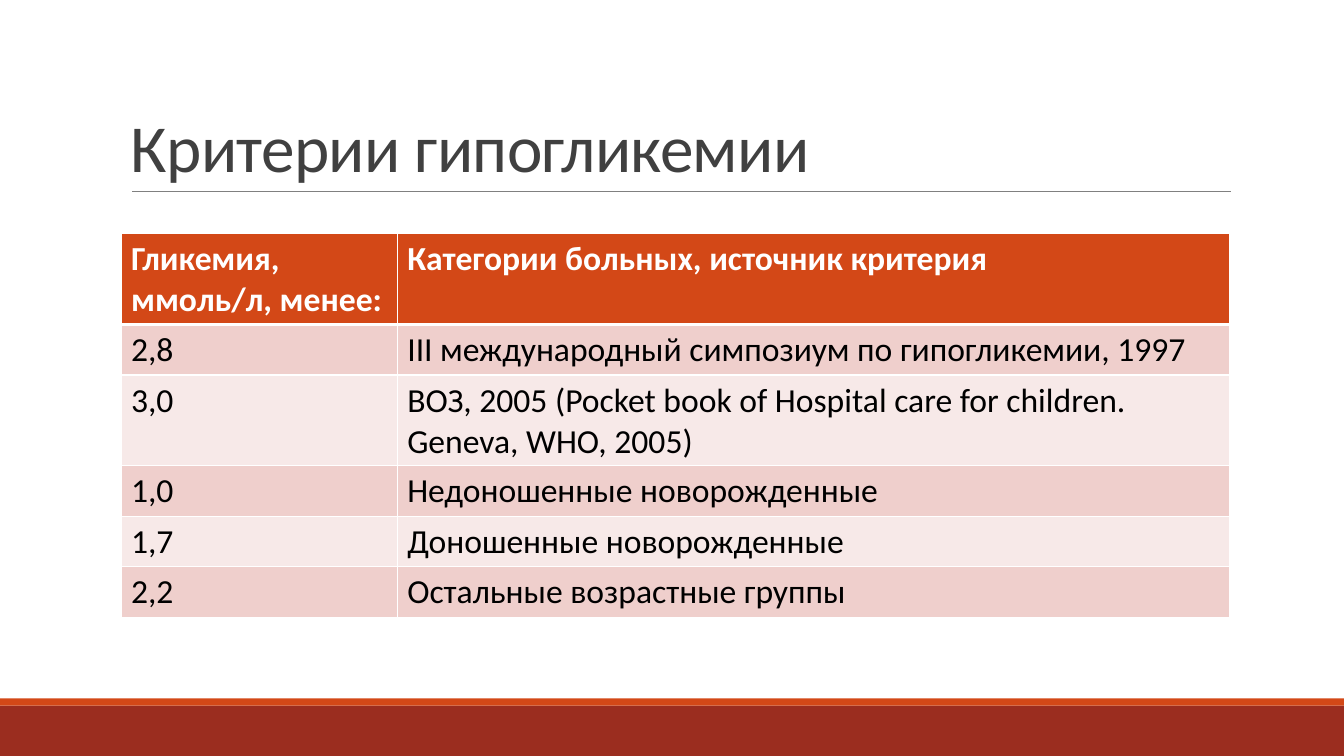
from lxml import etree
from pptx import Presentation
from pptx.dml.color import RGBColor
from pptx.enum import shapes, text
from pptx.oxml import ns
from pptx.util import Inches, Pt

TITLE = "Критерии гипогликемии"
ROWS = [
    ("Гликемия, ммоль/л, менее:", "Категории больных, источник критерия"),
    ("2,8", "III международный симпозиум по гипогликемии, 1997"),
    ("3,0", "ВОЗ, 2005 (Pocket book of Hospital care for children. Geneva, WHO, 2005)"),
    ("1,0", "Недоношенные новорожденные"),
    ("1,7", "Доношенные новорожденные"),
    ("2,2", "Остальные возрастные группы"),
]
COLUMN_WIDTHS = (2.74, 8.26)
ONE_LINE, TWO_LINES = 0.5, 0.9
ROW_HEIGHTS = (TWO_LINES, ONE_LINE, TWO_LINES, ONE_LINE, ONE_LINE, ONE_LINE)

WHITE = RGBColor(0xFF, 0xFF, 0xFF)
BLACK = RGBColor(0x00, 0x00, 0x00)
ORANGE = RGBColor(0xD3, 0x48, 0x17)
DARK_RED = RGBColor(0x9B, 0x2D, 0x1F)
DARK_PINK = RGBColor(0xEF, 0xCF, 0xCC)
LIGHT_PINK = RGBColor(0xF7, 0xE9, 0xE8)
TITLE_GREY = RGBColor(0x40, 0x40, 0x40)
RULE_GREY = RGBColor(0x80, 0x80, 0x80)

# top, height, colour
FOOTER_BANDS = [(7, 0.5, DARK_RED), (6.93, 0.07, ORANGE)]
TITLE_FORMAT = {"name": "Calibri", "size": Pt(48)}
HEADER_FORMAT = {"name": "Calibri", "size": Pt(24), "bold": True}
BODY_FORMAT = {**HEADER_FORMAT, "bold": False}


def set_font(font, font_format, color):
    for name, value in font_format.items():
        setattr(font, name, value)
    font.color.rgb = color


def add_border(cell, side, points):
    """Draw a white line on one side (L, R, T or B) of a cell."""
    properties = cell._tc.get_or_add_tcPr()
    line = etree.SubElement(properties, ns.qn(f"a:ln{side}"), w=str(Pt(points)))
    fill = etree.SubElement(line, ns.qn("a:solidFill"))
    etree.SubElement(fill, ns.qn("a:srgbClr"), val=str(WHITE))


def add_footer(slide, width):
    for top, height, color in FOOTER_BANDS:
        band = slide.shapes.add_shape(
            shapes.MSO_SHAPE.RECTANGLE, 0, Inches(top), width, Inches(height))
        band.shadow.inherit = False
        band.fill.solid()
        band.fill.fore_color.rgb = color
        band.line.fill.background()


def add_title(slide):
    rule = slide.shapes.add_connector(
        shapes.MSO_CONNECTOR.STRAIGHT,
        Inches(1.31), Inches(1.9), Inches(12.21), Inches(1.9))
    rule.line.color.rgb = RULE_GREY
    rule.line.width = Pt(0.5)
    etree.SubElement(rule._element.spPr, ns.qn("a:effectLst"))

    box = slide.shapes.add_textbox(Inches(1.2), Inches(0.31), Inches(11), Inches(1.59))
    frame = box.text_frame
    frame.word_wrap = True
    frame.vertical_anchor = text.MSO_ANCHOR.BOTTOM
    paragraph = frame.paragraphs[0]
    paragraph.line_spacing = 0.85
    run = paragraph.add_run()
    run.text = TITLE
    set_font(run.font, TITLE_FORMAT, TITLE_GREY)
    run.font._element.set("spc", "-50")


def add_criteria_table(slide):
    table = slide.shapes.add_table(
        len(ROWS), len(COLUMN_WIDTHS), Inches(1.2), Inches(2.32),
        Inches(sum(COLUMN_WIDTHS)), Inches(sum(ROW_HEIGHTS))).table
    for column, width in zip(table.columns, COLUMN_WIDTHS):
        column.width = Inches(width)
    for index, (row, height, values) in enumerate(zip(table.rows, ROW_HEIGHTS, ROWS)):
        row.height = Inches(height)
        header = index == 0
        fill = ORANGE if header else DARK_PINK if index % 2 else LIGHT_PINK
        for cell, value in zip(row.cells, values):
            for side in "LRTB":
                below_header = (index, side) in ((0, "B"), (1, "T"))
                add_border(cell, side, 3 if below_header else 1)
            cell.fill.solid()
            cell.fill.fore_color.rgb = fill
            cell.text = value
            set_font(cell.text_frame.paragraphs[0].runs[0].font,
                     HEADER_FORMAT if header else BODY_FORMAT,
                     WHITE if header else BLACK)


def main():
    presentation = Presentation()
    presentation.slide_width = Inches(13.33)
    presentation.slide_height = Inches(7.5)
    slide = presentation.slides.add_slide(presentation.slide_layouts[6])
    add_footer(slide, presentation.slide_width)
    add_title(slide)
    add_criteria_table(slide)
    presentation.save("out.pptx")


if __name__ == "__main__":
    main()
